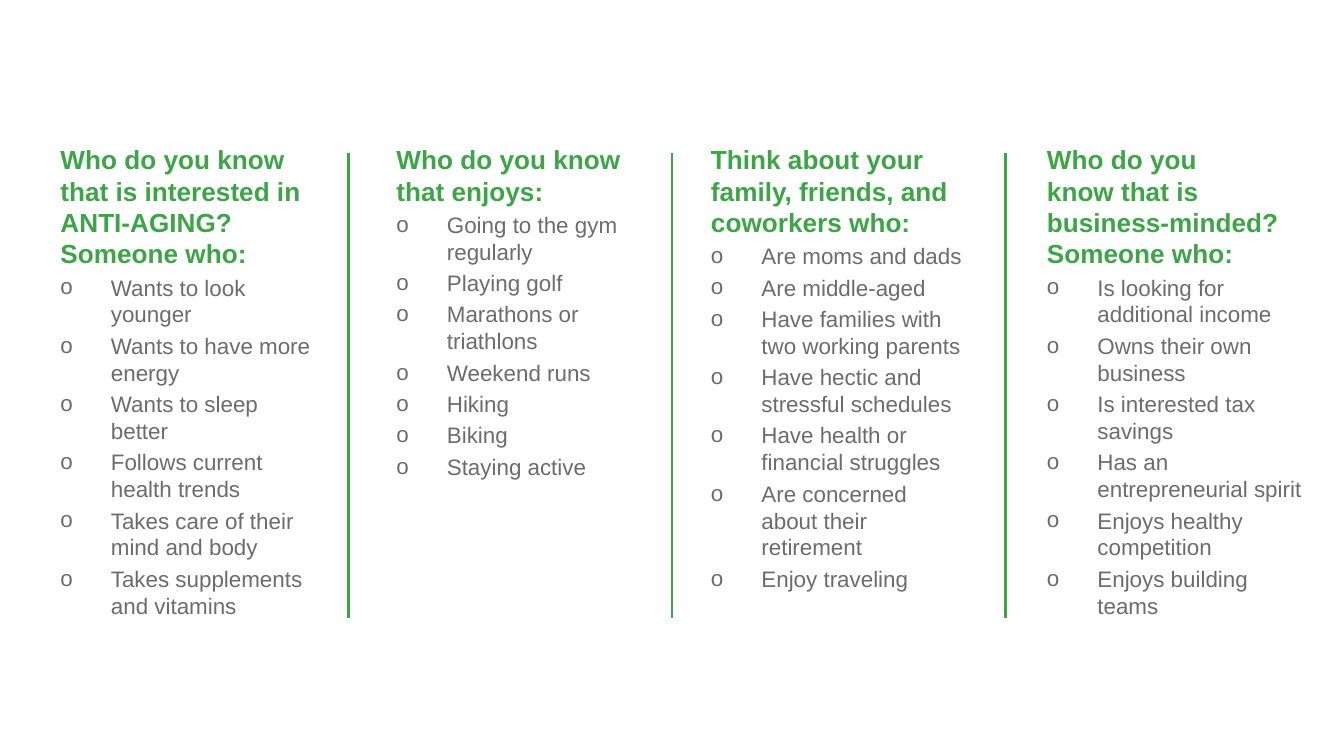
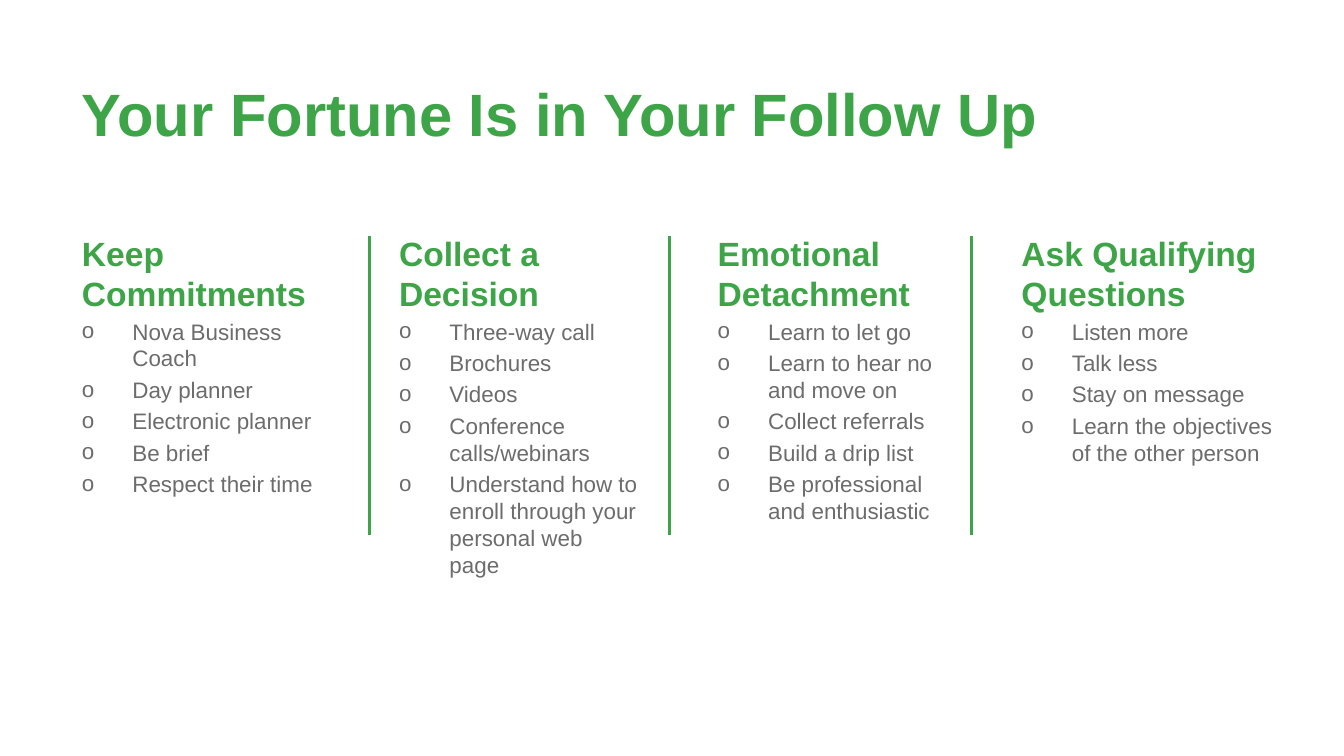
from lxml.etree import SubElement
from pptx import Presentation
from pptx.dml.color import RGBColor
from pptx.enum.shapes import MSO_CONNECTOR
from pptx.enum.text import MSO_ANCHOR, MSO_AUTO_SIZE, PP_ALIGN
from pptx.oxml.ns import qn
from pptx.util import Pt

GREEN = RGBColor(0x3D, 0xA5, 0x47)
GRAY = RGBColor(0x6C, 0x6C, 0x6C)
FONT = "Arial"
COMPARISON_LAYOUT = 4
ITEM_SIZE = 12
HANGING = 27

PROSPECT_COLUMNS = [
    (25.2, 149.8, 264,
     "Who do you know that is interested in ANTI-AGING? Someone who:",
     ["Wants to look younger", "Wants to have more energy",
      "Wants to sleep better", "Follows current health trends",
      "Takes care of their mind and body", "Takes supplements and vitamins"]),
    (205.2, 139, 204.5,
     "Who do you know that enjoys:",
     ["Going to the gym regularly", "Playing golf",
      "Marathons or triathlons", "Weekend runs", "Hiking", "Biking",
      "Staying active"]),
    (373.7, 151.9, 257.8,
     "Think about your family, friends, and coworkers who:",
     ["Are moms and dads", "Are middle-aged",
      "Have families with two working parents",
      "Have hectic and stressful schedules",
      "Have health or financial struggles",
      "Are concerned about their retirement", "Enjoy traveling"]),
    (553.7, 153.4, 264,
     "Who do you\nknow that is business-minded? Someone who:",
     ["Is looking for additional income", "Owns their own business",
      "Is interested tax savings", "Has an entrepreneurial spirit",
      "Enjoys healthy competition", "Enjoys building teams"]),
]

FOLLOW_UP_COLUMNS = [
    (36.7, 142.6, 160, "Keep Commitments",
     ["Nova Business Coach", "Day planner", "Electronic planner", "Be brief",
      "Respect their time"]),
    (206.6, 142.6, 160, "Collect a Decision",
     ["Three-way call", "Brochures", "Videos", "Conference calls/webinars",
      "Understand how to enroll through your personal web page"]),
    (377.3, 143.3, 175.7, "Emotional Detachment",
     ["Learn to let go", "Learn to hear no and move on",
      "Collect referrals", "Build a drip list",
      "Be professional and enthusiastic"]),
    (540, 151.9, 158.4, "Ask Qualifying Questions",
     ["Listen more", "Talk less", "Stay on message",
      "Learn the objectives of the other person"]),
]


class ColumnDeck:
    """Builds slides of green-headed list columns parted by rules."""

    def __init__(self):
        self.deck = Presentation()
        self.deck.slide_width, self.deck.slide_height = Pt(720), Pt(405)
        self.page = None

    def add_page(self):
        layout = self.deck.slide_layouts[COMPARISON_LAYOUT]
        self.page = self.deck.slides.add_slide(layout)

    def place(self, box, left, top, width, height, anchor):
        box.left, box.top = Pt(left), Pt(top)
        box.width, box.height = Pt(width), Pt(height)
        frame = box.text_frame
        frame.word_wrap = True
        frame.auto_size = MSO_AUTO_SIZE.NONE
        frame.vertical_anchor = anchor
        return frame

    def fill_paragraph(self, para, text, size, color, bold, bullet=None):
        para.text = text
        para.alignment = PP_ALIGN.LEFT
        para.space_before = Pt(size * 0.2 if bullet else 0)
        properties = para._p.get_or_add_pPr()
        indent = HANGING if bullet else 0
        properties.set("marL", str(Pt(indent)))
        properties.set("indent", str(Pt(-indent)))
        if bullet:
            SubElement(properties, qn("a:buFont"), typeface=FONT)
            SubElement(properties, qn("a:buChar"), char=bullet)
        else:
            SubElement(properties, qn("a:buNone"))
        font = para.font
        font.name, font.size, font.bold = FONT, Pt(size), bold
        font.color.rgb = color

    def title(self, text):
        box = self.page.shapes.title
        frame = self.place(box, 36.7, 32.4, 555, 56.2, MSO_ANCHOR.MIDDLE)
        self.fill_paragraph(frame.paragraphs[0], text, 32, GREEN, True)

    def drop_title(self):
        element = self.page.shapes.title._element
        element.getparent().remove(element)

    def columns(self, columns, top, heading_size):
        bodies = [box for box in self.page.placeholders
                  if box.placeholder_format.idx > 0]
        for box, (left, width, height, heading, items) in zip(bodies, columns):
            frame = self.place(box, left, top, width, height, MSO_ANCHOR.TOP)
            self.fill_paragraph(frame.paragraphs[0], heading, heading_size,
                                GREEN, True)
            for item in items:
                self.fill_paragraph(frame.add_paragraph(), item, ITEM_SIZE,
                                    GRAY, False, "o")

    def rules(self, positions, top, bottom):
        for x in positions:
            rule = self.page.shapes.add_connector(
                MSO_CONNECTOR.STRAIGHT, Pt(x), Pt(top), Pt(x), Pt(bottom))
            rule.line.color.rgb = GREEN
            rule.line.width = Pt(1.5)
            SubElement(rule._element.spPr, qn("a:effectLst"))

    def save(self):
        self.deck.save("out.pptx")


def main():
    deck = ColumnDeck()

    deck.add_page()
    deck.drop_title()
    deck.columns(PROSPECT_COLUMNS, 73.4, 14)
    deck.rules([186.5, 360, 538.6], 82.1, 331.2)

    deck.add_page()
    deck.title("Your Fortune Is in Your Follow Up")
    deck.columns(FOLLOW_UP_COLUMNS, 121, 18)
    deck.rules([198, 358.6, 520.6], 126.7, 286.6)

    deck.save()


if __name__ == "__main__":
    main()
